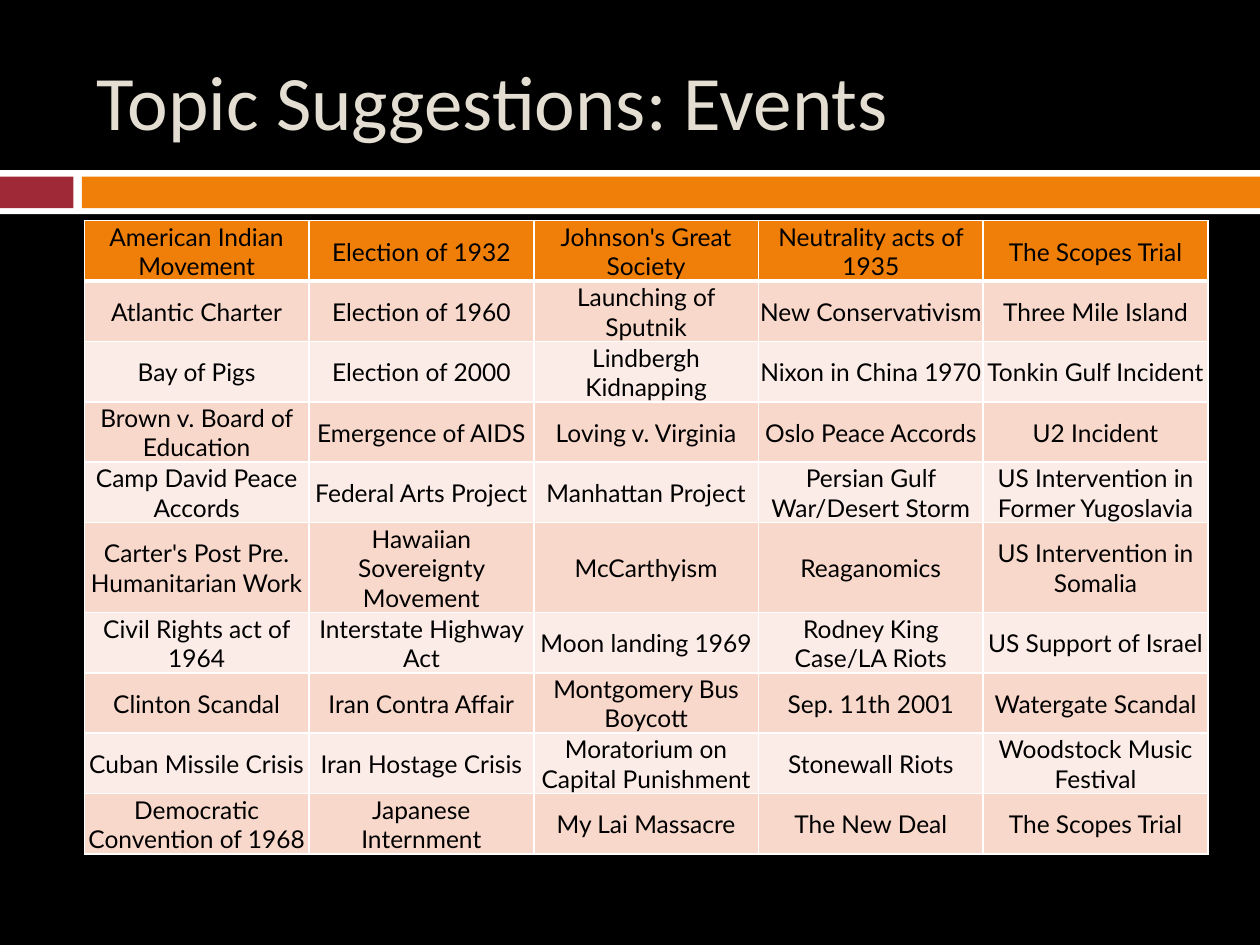
from lxml import etree
from pptx import Presentation
from pptx.dml.color import RGBColor
from pptx.enum import shapes, text
from pptx.oxml import ns
from pptx.util import Cm, Pt

BLACK = RGBColor(0x00, 0x00, 0x00)
WHITE = RGBColor(0xFF, 0xFF, 0xFF)
RED = RGBColor(0x9F, 0x29, 0x36)
ORANGE = RGBColor(0xF0, 0x7F, 0x09)
CREAM = RGBColor(0xE3, 0xDE, 0xD1)
ROSE = RGBColor(0xF9, 0xD8, 0xCC)
PALE = RGBColor(0xFC, 0xEC, 0xE7)

EVENTS = [
    ["American Indian Movement", "Election of 1932", "Johnson's Great Society",
     "Neutrality acts of 1935", "The Scopes Trial"],
    ["Atlantic Charter", "Election of 1960", "Launching of Sputnik",
     "New Conservativism", "Three Mile Island"],
    ["Bay of Pigs", "Election of 2000", "Lindbergh Kidnapping",
     "Nixon in China 1970", "Tonkin Gulf Incident"],
    ["Brown v. Board of Education", "Emergence of AIDS", "Loving v. Virginia",
     "Oslo Peace Accords", "U2 Incident"],
    ["Camp David Peace Accords", "Federal Arts Project", "Manhattan Project",
     "Persian Gulf War/Desert Storm", "US Intervention in Former Yugoslavia"],
    ["Carter's Post Pre. Humanitarian Work", "Hawaiian Sovereignty Movement",
     "McCarthyism", "Reaganomics", "US Intervention in Somalia"],
    ["Civil Rights act of 1964", "Interstate Highway Act", "Moon landing 1969",
     "Rodney King Case/LA Riots", "US Support of Israel"],
    ["Clinton Scandal", "Iran Contra Affair", "Montgomery Bus Boycott",
     "Sep. 11th 2001", "Watergate Scandal"],
    ["Cuban Missile Crisis", "Iran Hostage Crisis",
     "Moratorium on Capital Punishment", "Stonewall Riots",
     "Woodstock Music Festival"],
    ["Democratic Convention of 1968", "Japanese Internment", "My Lai Massacre",
     "The New Deal", "The Scopes Trial"],
]


def add_run(para, words, font, size, color):
    run = para.add_run()
    run.text = words
    run.font.name = font
    run.font.size = Pt(size)
    run.font.color.rgb = color


def add_edge(cell, side, width):
    props = cell._tc.get_or_add_tcPr()
    line = etree.SubElement(props, ns.qn(f"a:ln{side}"), w=str(Pt(width)))
    fill = etree.SubElement(line, ns.qn("a:solidFill"))
    etree.SubElement(fill, ns.qn("a:srgbClr"), val=str(WHITE))


# Slide with a black background
deck = Presentation()
deck.slide_width, deck.slide_height = Cm(25.4), Cm(19.05)
slide = deck.slides.add_slide(deck.slide_layouts[5])
slide.background.fill.solid()
slide.background.fill.fore_color.rgb = BLACK

# Band under the title: white strip, red block, orange bar
for left, top, width, height, color in [
    (0, 3.43, 25.4, 0.89, WHITE),
    (0, 3.56, 1.48, 0.64, RED),
    (1.65, 3.56, 23.75, 0.64, ORANGE),
]:
    bar = slide.shapes.add_shape(shapes.MSO_SHAPE.RECTANGLE,
                                 Cm(left), Cm(top), Cm(width), Cm(height))
    bar.shadow.inherit = False
    bar.fill.solid()
    bar.fill.fore_color.rgb = color
    bar.line.fill.background()

# Title
title = slide.shapes.title
title.left, title.top = Cm(1.7), Cm(0.64)
title.width, title.height = Cm(22.66), Cm(2.74)
title.text_frame.vertical_anchor = text.MSO_ANCHOR.MIDDLE
para = title.text_frame.paragraphs[0]
para.alignment = text.PP_ALIGN.LEFT
add_run(para, "Topic Suggestions: Events", "Calibri", 44, CREAM)

# Table of events
rows, cols = len(EVENTS), len(EVENTS[0])
table = slide.shapes.add_table(rows, cols, Cm(1.7), Cm(4.45),
                               Cm(4.53 * cols), Cm(1.04 * rows)).table
for r, events in enumerate(EVENTS):
    for c, event in enumerate(events):
        cell = table.cell(r, c)
        cell.margin_left = cell.margin_right = cell.margin_top = Cm(0.03)
        cell.margin_bottom = 0
        cell.vertical_anchor = text.MSO_ANCHOR.MIDDLE
        para = cell.text_frame.paragraphs[0]
        para.alignment = text.PP_ALIGN.CENTER
        add_run(para, event, "Lato", 14, BLACK)

        # Thin white grid with a thick line under the first row
        add_edge(cell, "L", 1)
        add_edge(cell, "R", 1)
        add_edge(cell, "T", 3 if r == 1 else 1)
        add_edge(cell, "B", 3 if r == 0 else 1)
        cell.fill.solid()
        cell.fill.fore_color.rgb = ORANGE if r == 0 else ROSE if r % 2 else PALE

deck.save("out.pptx")
